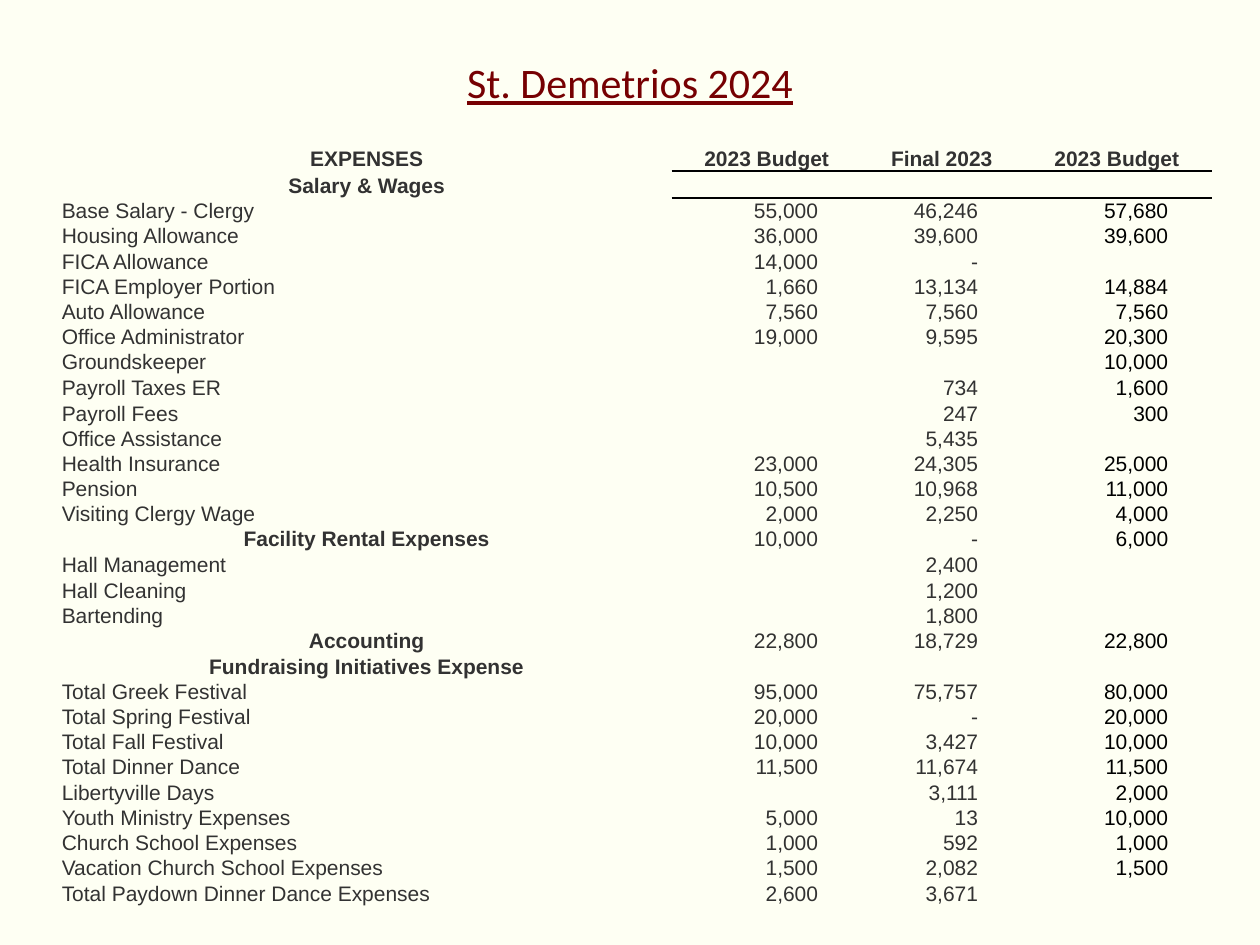
from lxml import etree
from pptx import Presentation
from pptx import util as u
from pptx.dml.color import RGBColor
from pptx.enum import text
from pptx.oxml import ns

Pt = u.Pt
HEADINGS = ("EXPENSES", "2023 Budget", "Final 2023", "2023 Budget")
SECTIONS = ("Salary & Wages", "Facility Rental Expenses", "Accounting",
            "Fundraising Initiatives Expense")
EXPENSES = (
    ("Salary & Wages", "", "", ""),
    ("Base Salary - Clergy", "55,000", "46,246", "57,680"),
    ("Housing Allowance", "36,000", "39,600", "39,600"),
    ("FICA Allowance", "14,000", "-", ""),
    ("FICA Employer Portion", "1,660", "13,134", "14,884"),
    ("Auto Allowance", "7,560", "7,560", "7,560"),
    ("Office Administrator", "19,000", "9,595", "20,300"),
    ("Groundskeeper", "", "", "10,000"),
    ("Payroll Taxes ER", "", "734", "1,600"),
    ("Payroll Fees", "", "247", "300"),
    ("Office Assistance", "", "5,435", ""),
    ("Health Insurance", "23,000", "24,305", "25,000"),
    ("Pension", "10,500", "10,968", "11,000"),
    ("Visiting Clergy Wage", "2,000", "2,250", "4,000"),
    ("Facility Rental Expenses", "10,000", "-", "6,000"),
    ("Hall Management", "", "2,400", ""),
    ("Hall Cleaning", "", "1,200", ""),
    ("Bartending", "", "1,800", ""),
    ("Accounting", "22,800", "18,729", "22,800"),
    ("Fundraising Initiatives Expense", "", "", ""),
    ("Total Greek Festival", "95,000", "75,757", "80,000"),
    ("Total Spring Festival", "20,000", "-", "20,000"),
    ("Total Fall Festival", "10,000", "3,427", "10,000"),
    ("Total Dinner Dance", "11,500", "11,674", "11,500"),
    ("Libertyville Days", "", "3,111", "2,000"),
    ("Youth Ministry Expenses", "5,000", "13", "10,000"),
    ("Church School Expenses", "1,000", "592", "1,000"),
    ("Vacation Church School Expenses", "1,500", "2,082", "1,500"),
    ("Total Paydown Dinner Dance Expenses", "2,600", "3,671", ""),
)


def colour(value):
    """Turn a hex string into a colour."""
    return RGBColor.from_string(value)


class BudgetSlide:
    """Hold the style and the slide, and draw its elements."""

    background, title_ink, ink, black = "FEFFF3", "760002", "323232", "000000"
    no_grid = "{2D5ABB26-0587-4C30-8999-92F81FD0307C}"
    size = 12
    widths = (348.5, 108.7, 91.4, 108.7)
    number_inset = 25

    def __init__(self, presentation):
        """Add a blank slide with the background colour."""
        self.slide = presentation.slides.add_slide(presentation.slide_layouts[6])
        self.slide.background.fill.solid()
        self.slide.background.fill.fore_color.rgb = colour(self.background)

    def format(self, paragraph, align, size, font, ink, **flags):
        """Align a paragraph and style its runs."""
        paragraph.alignment = align
        for run in paragraph.runs:
            run.font.size, run.font.name = Pt(size), font
            run.font.color.rgb = colour(ink)
            for name, value in flags.items():
                setattr(run.font, name, value)

    def title(self, words):
        """Draw the underlined title."""
        shape = self.slide.shapes.add_textbox(Pt(47.5), Pt(-15.8), Pt(625), Pt(90))
        frame = shape.text_frame
        frame.word_wrap = True
        frame.vertical_anchor = text.MSO_ANCHOR.BOTTOM
        frame.margin_bottom = Pt(14)
        frame.text = words
        paragraph = frame.paragraphs[0]
        paragraph.line_spacing = 0.7
        self.format(paragraph, text.PP_ALIGN.CENTER, 24, "Calibri",
                    self.title_ink, underline=True)

    def rule(self, cell, side):
        """Draw a black border on one side of a cell."""
        line = etree.Element(ns.qn(f"a:{side}"), w=str(Pt(1.5)))
        fill = etree.SubElement(line, ns.qn("a:solidFill"))
        etree.SubElement(fill, ns.qn("a:srgbClr"), val=self.black)
        cell._tc.get_or_add_tcPr().insert(0, line)

    def cell(self, cell, words, align, ink, bold, inset):
        """Fill one table cell with text."""
        cell.margin_left = cell.margin_top = cell.margin_bottom = 0
        cell.margin_right = Pt(inset)
        cell.vertical_anchor = text.MSO_ANCHOR.BOTTOM
        cell.fill.background()
        cell.text_frame.text = words
        paragraph = cell.text_frame.paragraphs[0]
        self.format(paragraph, align, self.size, "Arial", ink, bold=bold)
        if not words:
            etree.SubElement(paragraph._p, ns.qn("a:endParaRPr"),
                             sz=str(self.size * 100))

    def table(self, headings, rows):
        """Draw the table of expenses."""
        lines = (headings, *rows)
        heights = [15.1] * 2 + [14.33] * (len(lines) - 2)
        table = self.slide.shapes.add_table(
            len(lines), len(headings), Pt(35.3), Pt(82.8),
            Pt(sum(self.widths)), Pt(sum(heights))).table
        table.first_row = table.horz_banding = False
        table._tbl.tblPr[0].text = self.no_grid
        for column, width in zip(table.columns, self.widths):
            column.width = Pt(width)
        for row, height in zip(table.rows, heights):
            row.height = Pt(height)
        for row, line in enumerate(lines):
            for column, words in enumerate(line):
                cell = table.cell(row, column)
                heading = row == 0 or (column == 0 and words in SECTIONS)
                number = column > 0 and not heading
                align = (text.PP_ALIGN.CENTER if heading else
                         text.PP_ALIGN.RIGHT if number else text.PP_ALIGN.LEFT)
                ink = self.black if number and column == 3 else self.ink
                self.cell(cell, words, align, ink, heading,
                          self.number_inset if number else 0)
                if column and row < 2:
                    self.rule(cell, ("lnB", "lnT")[row])


def main():
    """Build and save the presentation."""
    presentation = Presentation()
    presentation.slide_width, presentation.slide_height = Pt(720), Pt(540)
    slide = BudgetSlide(presentation)
    slide.table(HEADINGS, EXPENSES)
    slide.title("St. Demetrios 2024")
    presentation.save("out.pptx")


if __name__ == "__main__":
    main()
